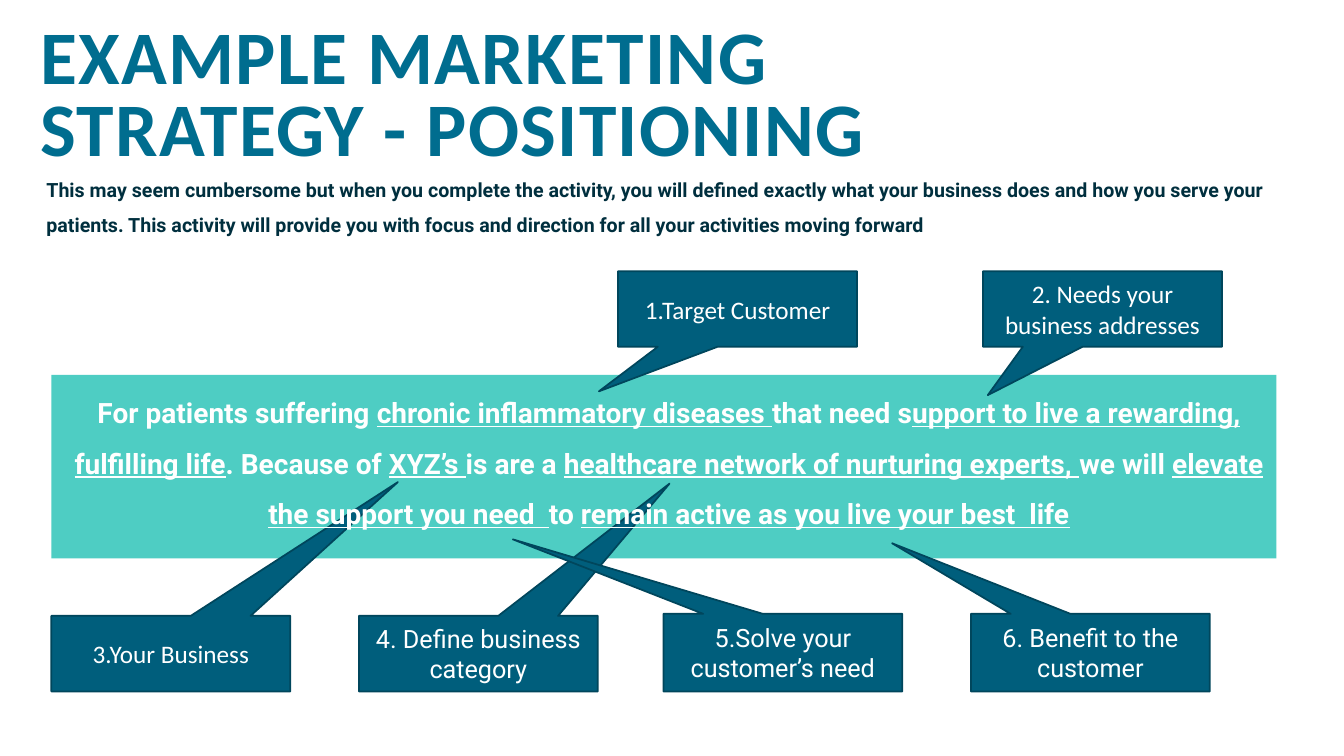
from lxml.etree import SubElement
from pptx import Presentation
from pptx.dml.color import RGBColor
from pptx.enum.shapes import MSO_SHAPE
from pptx.enum.text import MSO_ANCHOR, MSO_AUTO_SIZE, PP_ALIGN
from pptx.oxml.ns import qn
from pptx.util import Inches, Pt


def color(hex_string):
    return RGBColor.from_string(hex_string)


def write_run(paragraph, text, font="Roboto", size=18, fill="FFFFFF",
              bold=False, underline=False, tracking=0):
    run = paragraph.add_run()
    run.text = text
    run.font.name = font
    run.font.size = Pt(size)
    run.font.bold = bold
    run.font.underline = underline
    run.font.color.rgb = color(fill)
    if tracking:
        run.font._element.set("spc", str(tracking * 100))


class PositioningSlide:
    BAND = "4ECDC3"
    CALLOUT = "005E7C"
    OUTLINE = "00465C"
    HEADING = "006D8F"
    INTRO = "002F3E"

    def __init__(self, presentation):
        self.slide = presentation.slides.add_slide(presentation.slide_layouts[1])

    def place(self, shape, left, top, width, height):
        shape.left, shape.top = Inches(left), Inches(top)
        shape.width, shape.height = Inches(width), Inches(height)

    def prepare(self, shape, anchor, align, spacing=1.0, margin=0):
        frame = shape.text_frame
        frame.word_wrap = True
        frame.auto_size = MSO_AUTO_SIZE.NONE
        frame.vertical_anchor = anchor
        paragraph = frame.paragraphs[0]
        paragraph.alignment = align
        paragraph.line_spacing = spacing
        paragraph.space_before = Pt(0)
        properties = paragraph._p.get_or_add_pPr()
        properties.set("marL", str(Inches(margin)))
        properties.set("indent", "0")
        SubElement(properties, qn("a:buNone"))
        return paragraph

    def add_title(self, text, *box):
        title = self.slide.shapes.title
        self.place(title, *box)
        paragraph = self.prepare(title, MSO_ANCHOR.MIDDLE, PP_ALIGN.LEFT, 0.8)
        write_run(paragraph, text, font="Calibri", size=54, fill=self.HEADING,
                  bold=True, tracking=1)

    def add_intro(self, text, *box):
        body = self.slide.placeholders[1]
        self.place(body, *box)
        paragraph = self.prepare(body, MSO_ANCHOR.TOP, PP_ALIGN.LEFT, 1.5)
        write_run(paragraph, text, size=14, fill=self.INTRO, bold=True)

    def add_shape(self, kind, box, fill):
        shape = self.slide.shapes.add_shape(kind, *map(Inches, box))
        shape.shadow.inherit = False
        shape.fill.solid()
        shape.fill.fore_color.rgb = color(fill)
        return shape

    def add_band(self, *box):
        self.add_shape(MSO_SHAPE.RECTANGLE, box, self.BAND).line.fill.background()

    def add_callout(self, text, font, box, tip):
        callout = self.add_shape(MSO_SHAPE.RECTANGULAR_CALLOUT, box, self.CALLOUT)
        callout.line.color.rgb = color(self.OUTLINE)
        callout.line.width = Pt(1.25)
        callout.adjustments[0], callout.adjustments[1] = tip
        paragraph = self.prepare(callout, MSO_ANCHOR.MIDDLE, PP_ALIGN.CENTER)
        write_run(paragraph, text, font=font)

    def add_statement(self, parts, *box):
        statement = self.slide.shapes.add_textbox(*map(Inches, box))
        paragraph = self.prepare(statement, MSO_ANCHOR.TOP, PP_ALIGN.CENTER, 1.5, 0.1)
        frame = statement.text_frame
        frame.margin_left = frame.margin_right = Inches(0.05)
        frame.margin_top = frame.margin_bottom = Inches(0.05)
        for index, text in enumerate(parts):
            write_run(paragraph, text, size=20, bold=True, underline=index % 2 == 1)


STATEMENT = [
    "For patients suffering ", "chronic inflammatory diseases ",
    "that need s", "upport to live a rewarding, fulfilling life",
    ". Because of ", "XYZ’s ",
    "is are a ", "healthcare network of nurturing experts, ",
    "we will ", "elevate the support you need  ",
    "to ", "remain active as you live your best  life",
]

CALLOUTS = [
    ("1.Target Customer", "Calibri", 6.13, 2.69, 0.75, (-0.58, 1.09)),
    ("2. Needs your business addresses", "Calibri", 9.75, 2.69, 0.75, (-0.48, 1.14)),
    ("3.Your Business", "Calibri", 0.51, 6.11, 0.75, (0.95, -2.27)),
    ("4. Define business category", "Roboto", 3.56, 6.11, 0.75, (0.8, -2.25)),
    ("5.Solve your customer’s need", "Roboto", 6.58, 6.09, 0.77, (-1.13, -1.46)),
    ("6. Benefit to the customer", "Roboto", 9.63, 6.09, 0.77, (-0.83, -1.41)),
]


def main():
    presentation = Presentation()
    presentation.slide_width = Inches(13.33)
    presentation.slide_height = Inches(7.5)

    page = PositioningSlide(presentation)
    page.add_title("EXAMPLE MARKETING STRATEGY - POSITIONING", 0.3, 0.16, 10.63, 1.64)
    page.add_intro(
        "This may seem cumbersome but when you complete the activity, you will "
        "defined exactly what your business does and how you serve your patients. "
        "This activity will provide you with focus and direction for all your "
        "activities moving forward", 0.36, 1.6, 12.3, 0.78)
    page.add_band(0.51, 3.72, 12.15, 1.82)
    for text, font, left, top, height, tip in CALLOUTS:
        page.add_callout(text, font, (left, top, 2.37, height), tip)
    page.add_statement(STATEMENT, 0.51, 3.71, 12.15, 1.82)

    presentation.save("out.pptx")


if __name__ == "__main__":
    main()
